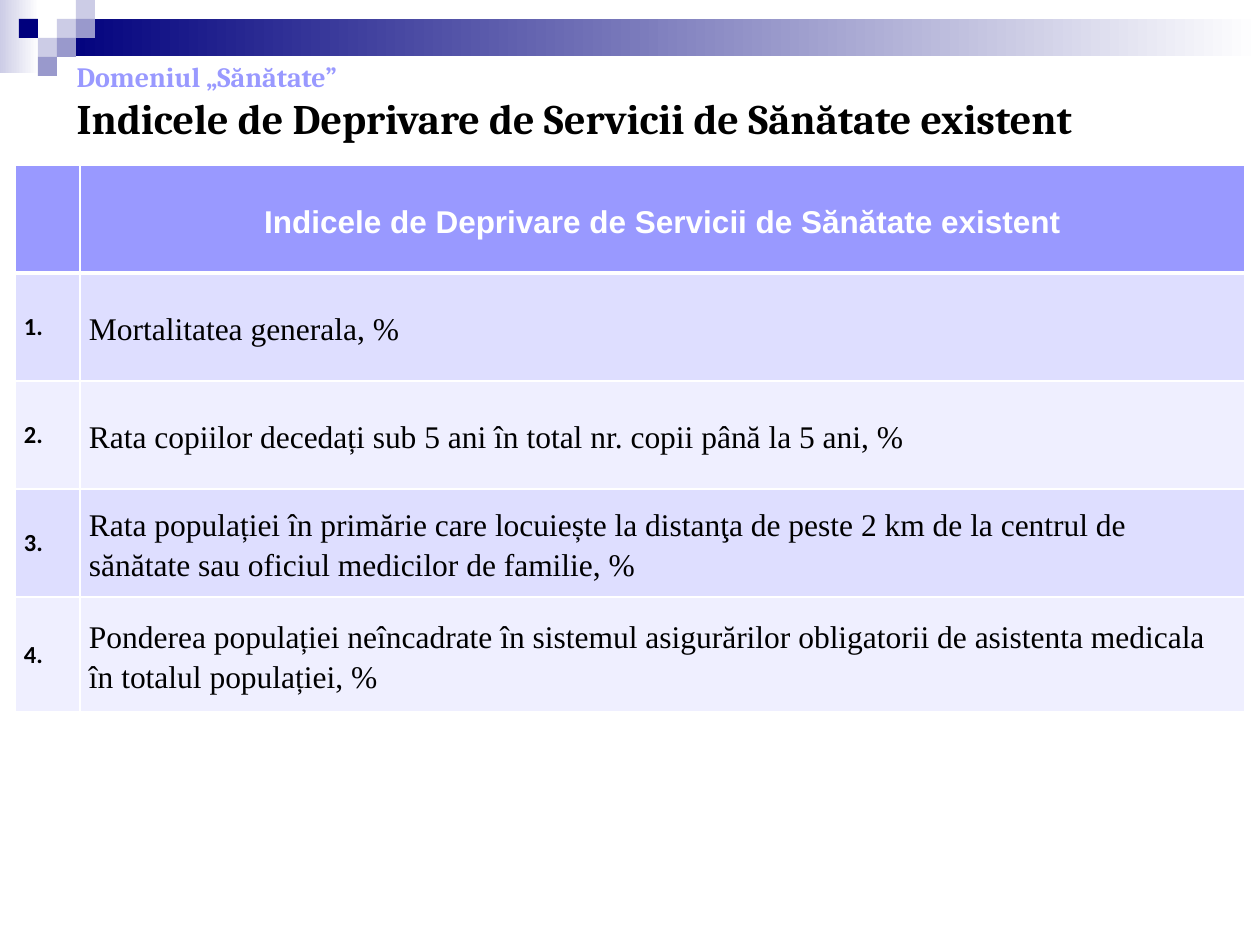
from pptx import Presentation
from pptx.dml.color import RGBColor
from pptx.enum.shapes import MSO_SHAPE as Shape
from pptx.enum.text import MSO_ANCHOR as Anchor, MSO_AUTO_SIZE as Fit, PP_ALIGN as Align
from pptx.oxml import parse_xml
from pptx.oxml.ns import nsdecls
from pptx.util import Pt

SCALE = 914400 / 126
NAVY, LILAC, PALE, MID = "00007D", "9999FF", "CCCCE6", "9999CC"
WHITE, BLACK = "FFFFFF", "000000"
BANDS = "DEDEFF", "EFEFFF"
STEP = 19

HEAD = "Indicele de Deprivare de Servicii de Sănătate existent"
ITEMS = [
    "Mortalitatea generala, %",
    "Rata copiilor decedați sub 5 ani în total nr. copii până la 5 ani, %",
    "Rata populației în primărie care locuiește la distanţa de peste 2 km "
    "de la centrul de sănătate sau oficiul medicilor de familie, %",
    "Ponderea populației neîncadrate în sistemul asigurărilor obligatorii "
    "de asistenta medicala în totalul populației, %",
]
# Column, row and colour of each square in the corner mosaic
TILES = [(3, 1, PALE), (4, 0, PALE), (4, 1, MID), (2, 2, PALE),
         (1, 1, NAVY), (3, 2, MID), (2, 3, MID)]


def px(n):
    return round(n * SCALE)


def rgb(code):
    return RGBColor.from_string(code)


def write(par, text, size=18, font="Times New Roman", color=BLACK, bold=False,
          align=Align.LEFT, gap=1.0):
    par.alignment, par.line_spacing = align, gap
    run = par.add_run()
    run.text = text
    face = run.font
    face.size, face.name, face.bold = Pt(size), font, bold
    face.color.rgb = rgb(color)


def edge(cell, side, width):
    """Draw a white border on one side (L, R, T or B) of a cell."""
    cell._tc.get_or_add_tcPr().append(parse_xml(
        f'<a:ln{side} {nsdecls("a")} w="{Pt(width)}"><a:solidFill>'
        f'<a:srgbClr val="{WHITE}"/></a:solidFill></a:ln{side}>'))


class Deck:
    def __init__(self):
        self.prs = Presentation()
        self.prs.slide_width, self.prs.slide_height = px(1260), px(945)
        self.slide = self.prs.slides.add_slide(self.prs.slide_layouts[5])

    def rect(self, x, y, w, h, color, fade=None):
        box = self.slide.shapes.add_shape(Shape.RECTANGLE, px(x), px(y), px(w), px(h))
        box.shadow.inherit = False
        box.line.fill.background()
        if fade is None:
            box.fill.solid()
            box.fill.fore_color.rgb = rgb(color)
            return
        box.fill.gradient()
        box.fill.gradient_angle = 0
        for stop, code in zip(box.fill.gradient_stops, (color, fade)):
            stop.color.rgb = rgb(code)

    def title(self, x, y, w, h, kicker, text):
        box = self.slide.shapes.title
        box.left, box.top, box.width, box.height = px(x), px(y), px(w), px(h)
        frame = box.text_frame
        frame.auto_size, frame.vertical_anchor = Fit.NONE, Anchor.MIDDLE
        frame.margin_top = frame.margin_bottom = 0
        par = frame.paragraphs[0]
        write(par, kicker, size=16, font="Cambria", color=LILAC, bold=True)
        par.add_line_break()
        write(par, text, size=24, font="Cambria", bold=True)

    def cell(self, cell, text, fill, top=1, foot=1, **style):
        for side, width in zip("LRTB", (1, 1, top, foot)):
            edge(cell, side, width)
        cell.fill.solid()
        cell.fill.fore_color.rgb = rgb(fill)
        cell.vertical_anchor = Anchor.MIDDLE
        cell.margin_left = cell.margin_right = px(9)
        cell.margin_top, cell.margin_bottom = px(1), 0
        if text:
            write(cell.text_frame.paragraphs[0], text, **style)

    def table(self, x, y, cols, rows, head, items):
        grid = self.slide.shapes.add_table(
            len(rows), len(cols), px(x), px(y), px(sum(cols)), px(sum(rows))).table
        for col, w in zip(grid.columns, cols):
            col.width = px(w)
        for row, h in zip(grid.rows, rows):
            row.height = px(h)
        self.cell(grid.cell(0, 0), "", LILAC, foot=3)
        self.cell(grid.cell(0, 1), head, LILAC, foot=3, font="Arial", color=WHITE,
                  bold=True, align=Align.CENTER, gap=1.15)
        for i, item in enumerate(items, 1):
            fill, top = BANDS[(i - 1) % 2], 3 if i == 1 else 1
            self.cell(grid.cell(i, 0), f"{i}.", fill, top, size=14, font="Calibri",
                      bold=True, align=Align.JUSTIFY)
            self.cell(grid.cell(i, 1), item, fill, top, gap=1.15)


def main():
    deck = Deck()
    deck.rect(0, 0, 39, 73, PALE, fade=WHITE)
    deck.rect(57, 19, 1203, 37, NAVY, fade=WHITE)
    for col, row, color in TILES:
        deck.rect(col * STEP, row * STEP, STEP, STEP, color)
    deck.title(64, 60, 1134, 82, "Domeniul „Sănătate”", HEAD)
    deck.table(15, 165, [65, 1165], [108] * 4 + [115], HEAD, ITEMS)
    deck.prs.save("out.pptx")


if __name__ == "__main__":
    main()
